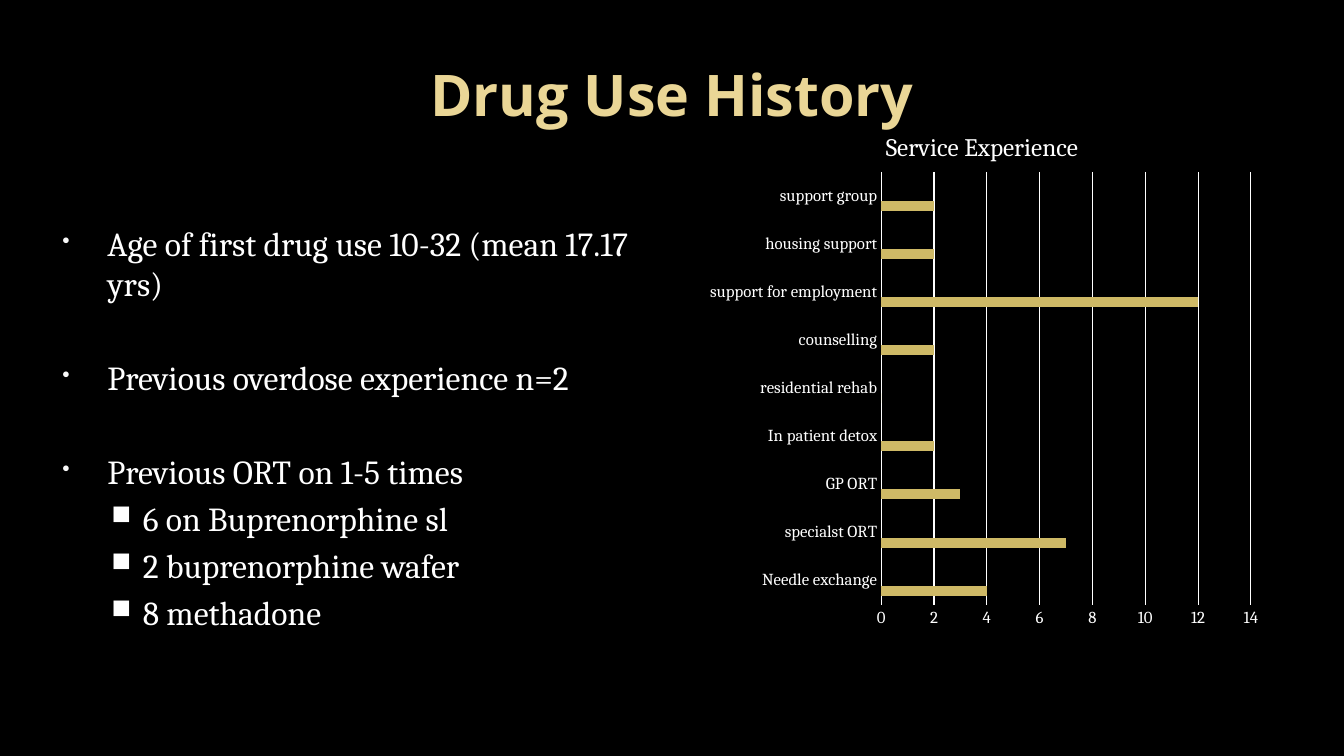
import pptx
import pptx.util
import pptx.dml.color
import pptx.chart.data
import pptx.enum.chart
import pptx.enum.text
import pptx.oxml
import pptx.oxml.ns

Cm, Pt = pptx.util.Cm, pptx.util.Pt
WHITE, GOLD, SAND = "FFFFFF", "EAD696", "CEB966"
SERIF = "Cambria"
POINTS = [
    ("Age of first drug use 10-32 (mean 17.17 yrs)", "main", 0),
    ("Previous overdose experience n=2", "main", 38.4),
    ("Previous ORT on 1-5 times", "main", 38.4),
    ("6 on Buprenorphine sl", "sub", 4.8),
    ("2 buprenorphine wafer", "sub", 4.8),
    ("8 methadone", "sub", 4.8),
]
LEVELS = {
    "main": dict(left=1.52, hang=1.14, mark="•", size=65, hue="F9F9F9"),
    "sub": dict(left=2.41, hang=0.79, mark="■", size=80, hue=WHITE),
}
USES = {
    "Needle exchange": 4, "specialst ORT": 7, "GP ORT": 3,
    "In patient detox": 2, "residential rehab": 0, "counselling": 2,
    "support for employment": 12, "housing support": 2, "support group": 2,
}


def rgb(hue):
    """Turn a hex string into a colour."""
    return pptx.dml.color.RGBColor.from_string(hue)


def style(item, **form):
    """Set each named format value on an object."""
    for name, value in form.items():
        setattr(item, name, value)


def ink(font, hue, size, face=SERIF, bold=False):
    """Set the face, size and colour of a font."""
    style(font, name=face, size=Pt(size), bold=bold)
    font.color.rgb = rgb(hue)


def rule(line):
    """Draw a line thin and white."""
    line.color.rgb = rgb(WHITE)
    line.width = Pt(0.75)


def frame(slide, box):
    """Add a wrapping text box and return its frame."""
    text = slide.shapes.add_textbox(*map(Cm, box)).text_frame
    text.word_wrap = True
    return text


def bullet(para, left, hang, mark, size, hue):
    """Give a paragraph a hanging bullet."""
    props = para._p.get_or_add_pPr()
    props.set("marL", str(Cm(left)))
    props.set("indent", str(-Cm(hang)))
    space = pptx.oxml.ns.nsdecls("a")
    for part in (
        f'<a:buClr {space}><a:srgbClr val="{hue}"/></a:buClr>',
        f'<a:buSzPct {space} val="{size * 1000}"/>',
        f'<a:buChar {space} char="{mark}"/>',
    ):
        props.append(pptx.oxml.parse_xml(part))


def place(parent, spot, **shares):
    """Fix a chart part at shares of the chart's size."""
    inner = '<c:layoutTarget val="inner"/>' if "w" in shares else ""
    modes = "".join(f'<c:{k}Mode val="edge"/>' for k in "xy")
    sizes = "".join(f'<c:{k} val="{v}"/>' for k, v in shares.items())
    for old in parent.findall(pptx.oxml.ns.qn("c:layout")):
        parent.remove(old)
    parent.insert(spot, pptx.oxml.parse_xml(
        f'<c:layout {pptx.oxml.ns.nsdecls("c")}><c:manualLayout>'
        f'{inner}{modes}{sizes}</c:manualLayout></c:layout>'))


def head(slide, box):
    """Write the slide title in the middle of its box."""
    text = frame(slide, box)
    text.vertical_anchor = pptx.enum.text.MSO_ANCHOR.MIDDLE
    para = text.paragraphs[0]
    para.alignment = pptx.enum.text.PP_ALIGN.CENTER
    para.text = "Drug Use History"
    ink(para.runs[0].font, GOLD, 41, "Open Sans", True)


def notes(slide, box):
    """Write the bulleted points."""
    text = frame(slide, box)
    for i, (words, level, gap) in enumerate(POINTS):
        para = text.add_paragraph() if i else text.paragraphs[0]
        para.text = words
        para.space_before = Pt(gap)
        bullet(para, **LEVELS[level])
        ink(para.runs[0].font, WHITE, 24)


def graph(slide, box):
    """Draw the bar chart of service experience."""
    data = pptx.chart.data.CategoryChartData()
    data.categories = list(USES)
    data.add_series("Series 1", list(USES.values()))
    for name in ("Series 2", "Series 3"):
        data.add_series(name, [None] * len(USES))
    kind = pptx.enum.chart.XL_CHART_TYPE.BAR_CLUSTERED
    chart = slide.shapes.add_chart(kind, *map(Cm, box), data).chart
    style(chart, has_legend=False, has_title=True)
    ink(chart.font, WHITE, 12)
    title = chart.chart_title
    title.include_in_layout = False
    title.text_frame.text = "Service Experience"
    ink(title.text_frame.paragraphs[0].runs[0].font, WHITE, 18)
    place(title._element, 1, x=0.32, y=0.05)
    place(chart._chartSpace.chart.plotArea, 0, x=0.32, y=0.135, w=0.647, h=0.8)

    plot = chart.plots[0]
    style(plot, gap_width=182, overlap=0, vary_by_categories=False)
    for row, hue in zip(plot.series, (SAND, "9CB084", "6BB1C9")):
        row.format.fill.solid()
        row.format.fill.fore_color.rgb = rgb(hue)

    none = pptx.enum.chart.XL_TICK_MARK.NONE
    cats, vals = chart.category_axis, chart.value_axis
    for axis in (cats, vals):
        style(axis, major_tick_mark=none, minor_tick_mark=none)
        ink(axis.tick_labels.font, WHITE, 12)
    style(vals, minimum_scale=0, maximum_scale=14, major_unit=2,
          has_major_gridlines=True)
    vals.format.line.fill.background()
    rule(cats.format.line)
    rule(vals.major_gridlines.format.line)


def main():
    """Build the slide and save it."""
    deck = pptx.Presentation()
    style(deck, slide_width=Cm(33.87), slide_height=Cm(19.05))
    slide = deck.slides.add_slide(deck.slide_layouts[6])
    slide.background.fill.solid()
    slide.background.fill.fore_color.rgb = rgb("000000")
    head(slide, (1.7, 0.76, 30.48, 3.18))
    notes(slide, (0.94, 5.49, 16.36, 11.91))
    graph(slide, (17.6, 2.49, 14.4, 13.64))
    deck.save("out.pptx")


if __name__ == "__main__":
    main()
